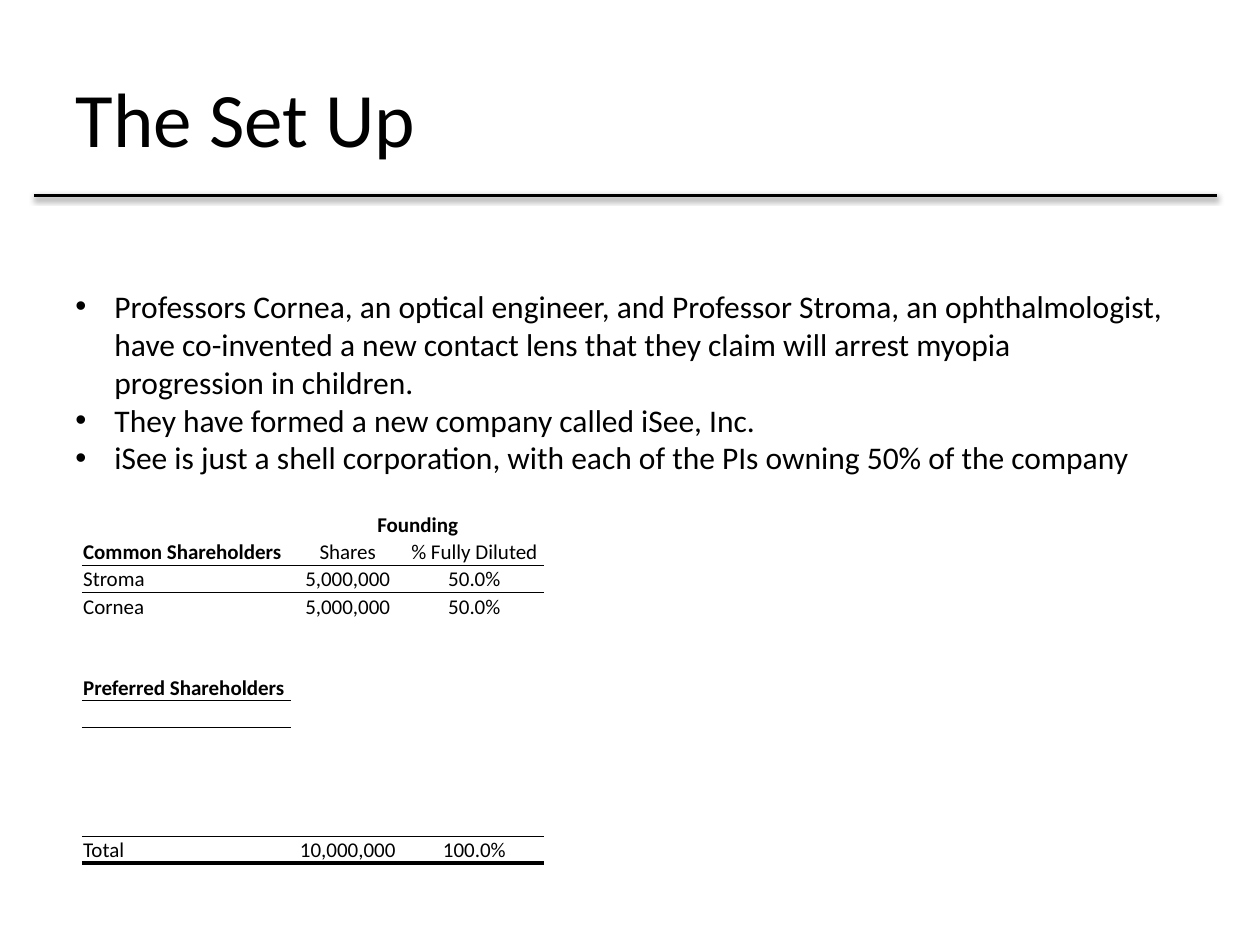
"""Build the slide on the set up of the company and its founding shares."""
from lxml import etree
from pptx import Presentation, util as u
from pptx.dml.color import RGBColor
from pptx.enum import shapes, text
from pptx.oxml import parse_xml
from pptx.oxml.ns import nsdecls, qn

BLACK = RGBColor(0, 0, 0)
LEFT, MID = text.PP_ALIGN.LEFT, text.PP_ALIGN.CENTER
BASE = text.MSO_ANCHOR.BOTTOM


def write(para, words, size=12, bold=False, align=LEFT):
    para.alignment = align
    if words:
        run = para.add_run()
        run.text = words
        font = run.font
        font.name, font.size, font.bold = "Calibri", u.Pt(size), bold
        font.color.rgb = BLACK
    else:
        etree.SubElement(para._p, qn("a:endParaRPr"), sz=str(size * 100))


def edge(cell, side, width):
    cell._tc.get_or_add_tcPr().append(parse_xml(
        f'<a:ln{side} {nsdecls("a")} w="{u.Pt(width)}"><a:solidFill>'
        f'<a:srgbClr val="{BLACK}"/></a:solidFill></a:ln{side}>'))


deck = Presentation()
deck.slide_width, deck.slide_height = u.Inches(10), u.Inches(7.5)
slide = deck.slides.add_slide(deck.slide_layouts[5])

title = slide.shapes.title
title.left, title.top = u.Inches(0.5), u.Inches(0.3)
title.width, title.height = u.Inches(9), u.Inches(1.25)
title.text_frame.vertical_anchor = text.MSO_ANCHOR.MIDDLE
write(title.text_frame.paragraphs[0], "The Set Up", size=44)

rule = slide.shapes.add_connector(
    shapes.MSO_CONNECTOR.STRAIGHT,
    u.Inches(0.27), u.Inches(1.55), u.Inches(9.66), u.Inches(1.55))
rule.line.color.rgb = BLACK
rule.line.width = u.Pt(2)
rule._element.spPr.append(parse_xml(
    f'<a:effectLst {nsdecls("a")}><a:outerShdw blurRad="40000" dist="20000" '
    f'dir="5400000" rotWithShape="0"><a:srgbClr val="{BLACK}">'
    '<a:alpha val="38000"/></a:srgbClr></a:outerShdw></a:effectLst>'))

points = [
    "Professors Cornea, an optical engineer, and Professor Stroma, an "
    "ophthalmologist, have co-invented a new contact lens that they claim "
    "will arrest myopia progression in children.",
    "They have formed a new company called iSee, Inc.",
    "iSee is just a shell corporation, with each of the PIs owning 50% of the company",
]
box = slide.shapes.add_textbox(
    u.Inches(0.5), u.Inches(2.23), u.Inches(8.85), u.Inches(1.62))
frame = box.text_frame
frame.word_wrap = True
frame.auto_size = text.MSO_AUTO_SIZE.SHAPE_TO_FIT_TEXT
for i, point in enumerate(points):
    para = frame.add_paragraph() if i else frame.paragraphs[0]
    write(para, point, size=18)
    props = para._p.get_or_add_pPr()
    props.set("marL", str(u.Inches(0.31)))
    props.set("indent", str(u.Inches(-0.31)))
    etree.SubElement(props, qn("a:buFont"), typeface="Arial")
    etree.SubElement(props, qn("a:buChar"), char="•")

blank = ("", "", "")
rows = [
    ("", "Founding", ""),
    ("Common Shareholders", "Shares", "% Fully Diluted"),
    ("Stroma", "5,000,000", "50.0%"),
    ("Cornea", "5,000,000", "50.0%"),
    blank, blank,
    ("Preferred Shareholders", "", ""),
    blank, blank, blank, blank, blank,
    ("Total", "10,000,000", "100.0%"),
]
heads = {"Founding", "Common Shareholders", "Preferred Shareholders"}
ruled = {1: 3, 6: 1, 11: 3}
last = len(rows) - 1

grid = slide.shapes.add_table(
    len(rows), 3, u.Inches(0.65), u.Inches(4.06),
    u.Inches(3.67), u.Inches(2.79)).table
grid.first_row = grid.horz_banding = False
grid._tbl.tblPr.find(qn("a:tableStyleId")).text = "{2D5ABB26-0587-4C30-8999-92F81FD0307C}"
for col, width in zip(grid.columns, (1.66, 0.9, 1.11)):
    col.width = u.Inches(width)
for r, row in enumerate(rows):
    grid.rows[r].height = u.Inches(2.79 / len(rows))
    for c, words in enumerate(row):
        cell = grid.cell(r, c)
        cell.margin_left = cell.margin_right = cell.margin_top = u.Inches(0.01)
        cell.margin_bottom = 0
        cell.vertical_anchor = BASE
        write(cell.text_frame.paragraphs[0], words,
              bold=words in heads, align=MID if c else LEFT)
        if c < ruled.get(r - 1, 0):
            edge(cell, "T", 0.5)
        if c < ruled.get(r, 0):
            edge(cell, "B", 0.5)
        if r == last:
            edge(cell, "B", 2)
        cell.fill.background()
grid.cell(0, 1).merge(grid.cell(0, 2))

deck.save("out.pptx")
